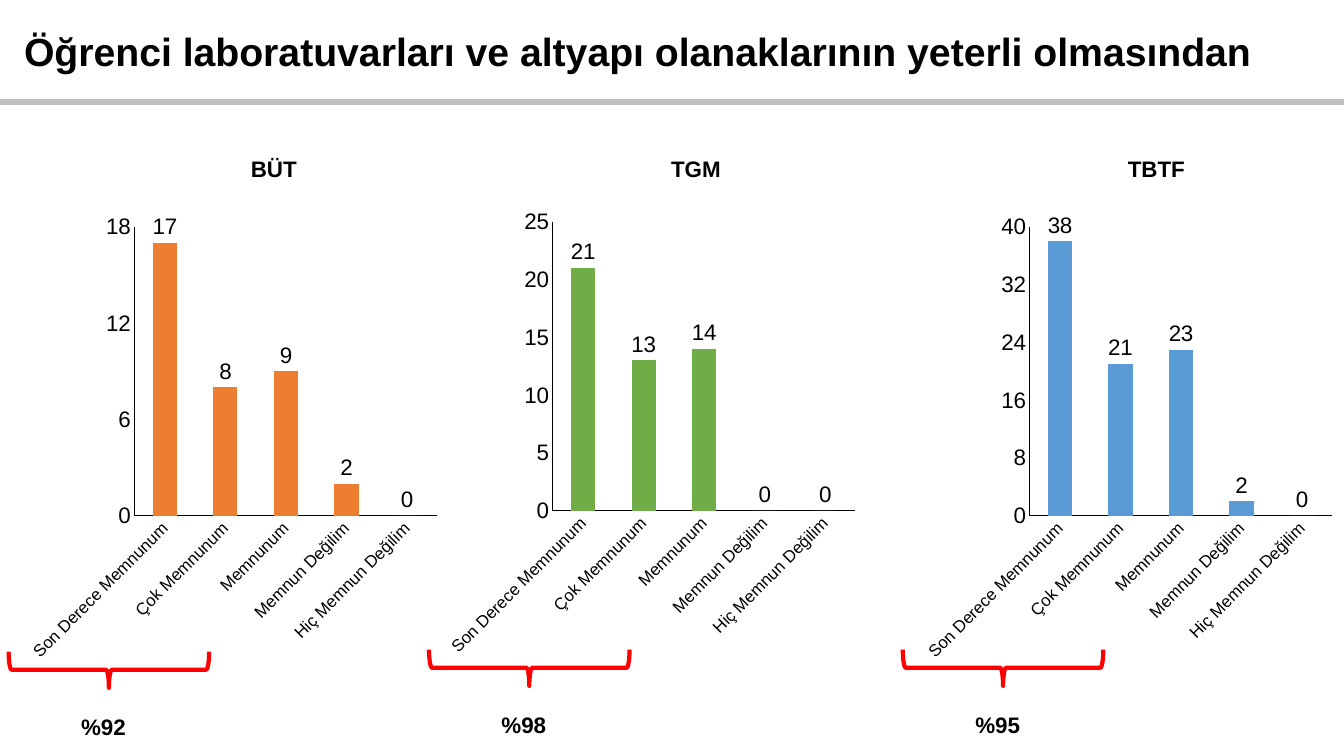
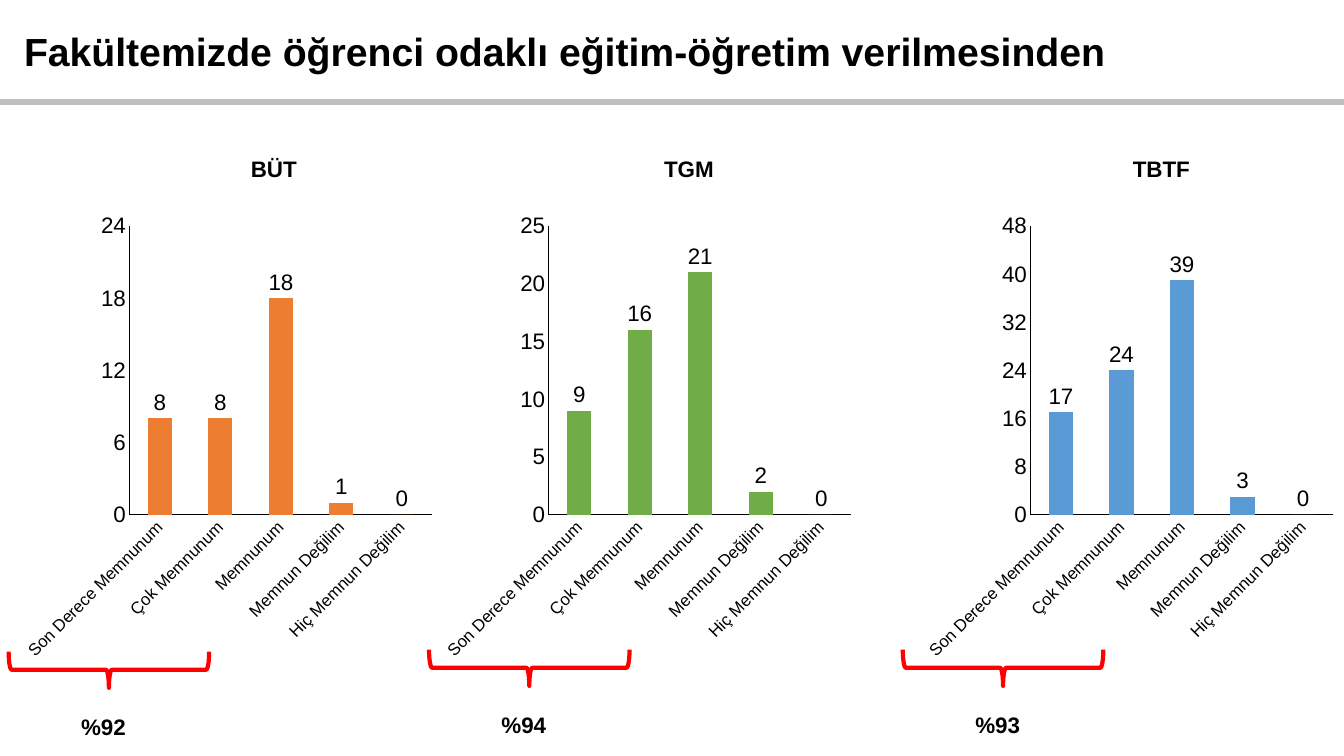
import pptx
import pptx.chart.data
import pptx.dml.color
import pptx.enum.chart
import pptx.enum.shapes
import pptx.enum.text
import pptx.oxml.ns
import pptx.util
import lxml.etree

presentation = pptx.Presentation()
presentation.slide_width = pptx.util.Emu(12192000)
presentation.slide_height = pptx.util.Emu(6858000)

# Grid: 100 columns by 100 rows
column = presentation.slide_width / 100
row = presentation.slide_height / 100

# Shared style
FONT = "Arial"
BLACK, GRAY, RED = "000000", "BFBFBF", "FF0000"
BAR_COLORS = ["ED7D31", "70AD47", "5B9BD5"]
DEPARTMENTS = ["BÜT", "TGM", "TBTF"]
ANSWERS = ["Son Derece Memnunum", "Çok Memnunum", "Memnunum",
           "Memnun Değilim", "Hiç Memnun Değilim"]

# Shared places, in columns and rows
CHART_WIDTH, CHART_HEIGHT = 31.58, 61.47
BRACE_WIDTH, BRACE_HEIGHT = 2.7, 26.53
LABEL_WIDTH, LABEL_HEIGHT = 7.05, 4.93
BRACE_PLACES = [(6.75, 75.33), (38.03, 75.07), (73.28, 75.07)]
MAJOR_UNITS = [6, 5, 8]


def color(hex_string):
    return pptx.dml.color.RGBColor.from_string(hex_string)


def add_text(slide, text, left, top, width, height, size=16, wrap=True):
    box = slide.shapes.add_textbox(*[
        pptx.util.Emu(round(length)) for length in
        (left * column, top * row, width * column, height * row)])
    frame = box.text_frame
    frame.word_wrap = wrap
    frame.auto_size = pptx.enum.text.MSO_AUTO_SIZE.SHAPE_TO_FIT_TEXT
    run = frame.paragraphs[0].add_run()
    run.text = text
    run.font.name = FONT
    run.font.size = pptx.util.Pt(size)
    run.font.bold = True
    run.font.color.rgb = color(BLACK)


# One entry per slide; lists run in the order of the departments
questions = [
    {
        "title": "Öğrenci laboratuvarları ve altyapı olanaklarının yeterli olmasından",
        "title_width": 93.9,
        "counts": [(17, 8, 9, 2, 0), (21, 13, 14, 0, 0), (38, 21, 23, 2, 0)],
        "axis_maximums": [18, 25, 40],
        "satisfied": ["%92", "%98", "%95"],
        "chart_places": [(1.58, 27.2), (32.7, 26.53), (68.18, 27.2)],
        "heading_lefts": [17.93, 49.2, 83.18],
    },
    {
        "title": "Fakültemizde öğrenci odaklı eğitim-öğretim verilmesinden",
        "title_width": 82.95,
        "counts": [(8, 8, 18, 1, 0), (9, 16, 21, 2, 0), (17, 24, 39, 3, 0)],
        "axis_maximums": [24, 25, 48],
        "satisfied": ["%92", "%94", "%93"],
        "chart_places": [(1.2, 27.07), (32.4, 27.07), (68.25, 27.07)],
        "heading_lefts": [17.93, 48.68, 83.55],
    },
]

for question in questions:
    slide = presentation.slides.add_slide(presentation.slide_layouts[6])

    # Title and rule below it
    add_text(slide, question["title"], 1.05, 2.93, question["title_width"], 7.6,
             size=28, wrap=False)
    rule_top = round(13.47 * row)
    rule = slide.shapes.add_connector(
        pptx.enum.shapes.MSO_CONNECTOR.STRAIGHT,
        0, rule_top, presentation.slide_width, rule_top)
    rule.line.color.rgb = color(GRAY)
    rule.line.width = pptx.util.Pt(4.5)
    lxml.etree.SubElement(rule.element.spPr, pptx.oxml.ns.qn("a:effectLst"))

    for index, department in enumerate(DEPARTMENTS):
        # Column chart of the answers
        chart_data = pptx.chart.data.CategoryChartData()
        chart_data.categories = ANSWERS
        chart_data.add_series("Series 1", question["counts"][index])
        left, top = question["chart_places"][index]
        chart = slide.shapes.add_chart(
            pptx.enum.chart.XL_CHART_TYPE.COLUMN_CLUSTERED,
            round(left * column), round(top * row),
            round(CHART_WIDTH * column), round(CHART_HEIGHT * row),
            chart_data).chart
        chart.has_title = False
        chart.has_legend = False
        chart.font.name = FONT
        chart.font.size = pptx.util.Pt(16)
        chart.font.color.rgb = color(BLACK)

        # Bars and their values
        plot = chart.plots[0]
        plot.gap_width = 150
        plot.vary_by_categories = False
        plot.has_data_labels = True
        plot.data_labels.show_value = True
        plot.data_labels.position = pptx.enum.chart.XL_LABEL_POSITION.OUTSIDE_END
        bar_fill = plot.series[0].format.fill
        bar_fill.solid()
        bar_fill.fore_color.rgb = color(BAR_COLORS[index])

        # Axes
        for axis in (chart.category_axis, chart.value_axis):
            axis.has_major_gridlines = False
            axis.major_tick_mark = pptx.enum.chart.XL_TICK_MARK.NONE
            axis.minor_tick_mark = pptx.enum.chart.XL_TICK_MARK.NONE
            axis.format.line.color.rgb = color(BLACK)
            axis.format.line.width = pptx.util.Pt(0.75)
        chart.value_axis.minimum_scale = 0
        chart.value_axis.maximum_scale = question["axis_maximums"][index]
        chart.value_axis.major_unit = MAJOR_UNITS[index]
        answer_labels = chart.category_axis.tick_labels
        answer_labels.font.size = pptx.util.Pt(12)
        # Answers slant upwards at 45 degrees
        label_body = chart.category_axis._element.find(
            pptx.oxml.ns.qn("c:txPr")).find(pptx.oxml.ns.qn("a:bodyPr"))
        label_body.set("rot", str(-45 * 60000))
        label_body.set("vert", "horz")

        # Department heading
        add_text(slide, department, question["heading_lefts"][index], 19.87,
                 LABEL_WIDTH, LABEL_HEIGHT)

        # Brace under the satisfied answers, with their share
        left, top = BRACE_PLACES[index]
        brace = slide.shapes.add_shape(
            pptx.enum.shapes.MSO_SHAPE.RIGHT_BRACE,
            round(left * column), round(top * row),
            round(BRACE_WIDTH * column), round(BRACE_HEIGHT * row))
        brace.rotation = 90
        brace.shadow.inherit = False
        brace.fill.background()
        brace.line.color.rgb = color(RED)
        brace.line.width = pptx.util.Pt(3)
        add_text(slide, question["satisfied"][index], left - 1.45, top + 18.4,
                 LABEL_WIDTH, LABEL_HEIGHT)

presentation.save("out.pptx")
